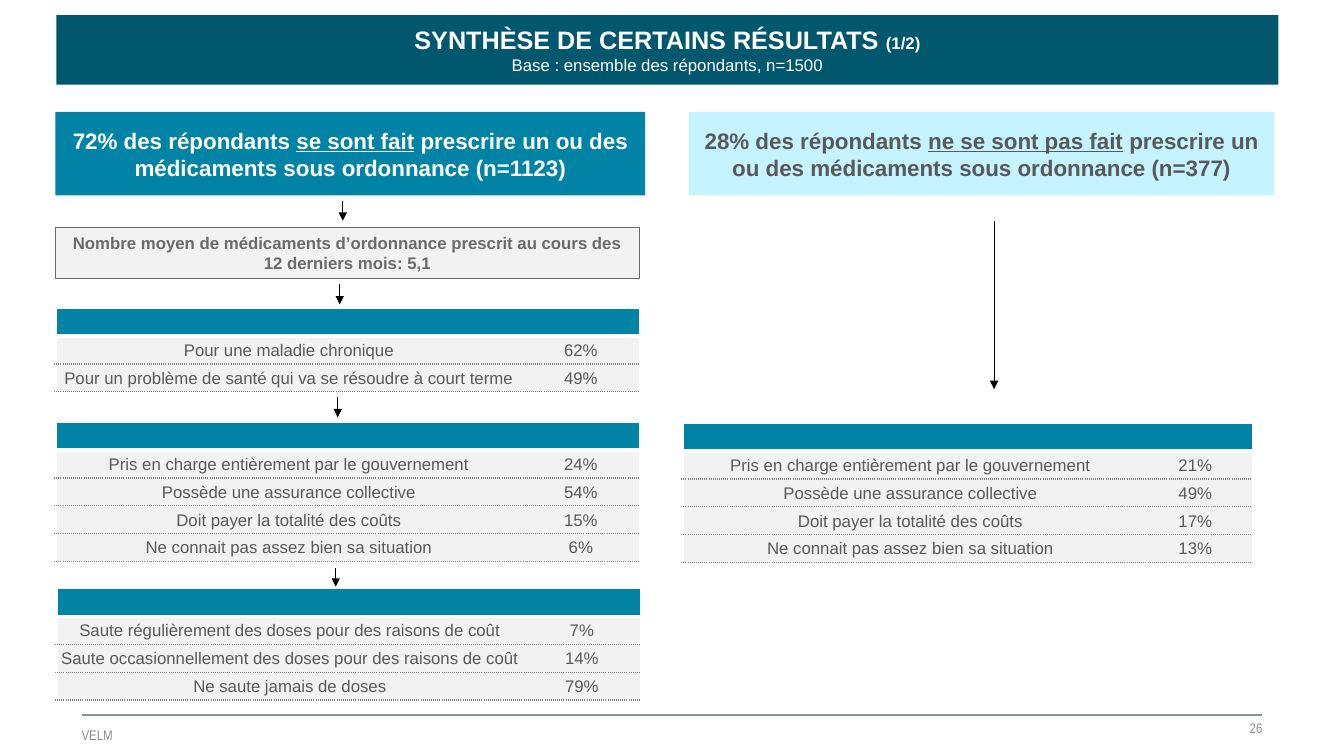
from lxml import etree
from pptx import Presentation
from pptx.dml.color import RGBColor
from pptx.enum.shapes import MSO_CONNECTOR, MSO_SHAPE
from pptx.enum.text import MSO_ANCHOR, MSO_AUTO_SIZE, PP_ALIGN
from pptx.oxml.ns import qn
from pptx.util import Inches, Pt

STRAIGHT = MSO_CONNECTOR.STRAIGHT
RECTANGLE = MSO_SHAPE.RECTANGLE
MIDDLE = MSO_ANCHOR.MIDDLE
CENTER, LEFT, RIGHT = PP_ALIGN.CENTER, PP_ALIGN.LEFT, PP_ALIGN.RIGHT
NO_AUTOFIT = MSO_AUTO_SIZE.NONE

WHITE, BLACK = "FFFFFF", "000000"
NAVY, TEAL, PALE_BLUE = "00576E", "0083A5", "C5F3FF"
PALE_GREY, DARK_GREY, MID_GREY = "F2F2F2", "595959", "6B6B6B"
FOOTER_GREY, RULE_GREY, DOT_GREY = "8C8C8C", "88959E", "808080"

ROW_HEIGHT = 0.276
VALUE_SHARE = 0.2
COVERAGE = [
    "Pris en charge entièrement par le gouvernement",
    "Possède une assurance collective",
    "Doit payer la totalité des coûts",
    "Ne connait pas assez bien sa situation",
]
TABLES = [
    (0.55, 3.06, 5.79, [
        ("Pour une maladie chronique", "62%"),
        ("Pour un problème de santé qui va se résoudre à court terme", "49%"),
    ]),
    (0.55, 4.19, 5.79, list(zip(COVERAGE, ["24%", "54%", "15%", "6%"]))),
    (6.77, 4.2, 5.65, list(zip(COVERAGE, ["21%", "49%", "17%", "13%"]))),
    (0.56, 5.84, 5.79, [
        ("Saute régulièrement des doses pour des raisons de coût", "7%"),
        ("Saute occasionnellement des doses pour des raisons de coût", "14%"),
        ("Ne saute jamais de doses", "79%"),
    ]),
]
GROUPS = [
    (0.55, 5.85, TEAL, WHITE, "72%", "se sont fait", "1123"),
    (6.83, 5.81, PALE_BLUE, DARK_GREY, "28%", "ne se sont pas fait", "377"),
]
ARROWS = [
    (3.4, 1.99, 2.19),
    (3.37, 2.82, 3.02),
    (3.35, 3.94, 4.14),
    (3.33, 5.64, 5.82),
    (9.86, 2.19, 3.86),
]


def color(value):
    return RGBColor.from_string(value)


def add_text(para, text, size=12, ink=DARK_GREY, font="Arial", bold=False, underline=False):
    span = para.add_run()
    span.text = text
    span.font.size = Pt(size)
    span.font.name = font
    span.font.bold = bold
    span.font.underline = underline
    span.font.color.rgb = color(ink)


def set_frame(box, align, inset=None):
    frame = box.text_frame
    frame.word_wrap = True
    frame.auto_size = NO_AUTOFIT
    frame.vertical_anchor = MIDDLE
    if inset is not None:
        frame.margin_left = frame.margin_right = Inches(inset)
        frame.margin_top = frame.margin_bottom = Inches(inset)
    para = frame.paragraphs[0]
    para.alignment = align
    return para


def add_title(page):
    box = page.shapes.title
    box.left, box.top = Inches(0.56), Inches(0.15)
    box.width, box.height = Inches(12.12), Inches(0.69)
    box.fill.solid()
    box.fill.fore_color.rgb = color(NAVY)
    para = set_frame(box, CENTER, inset=0)
    add_text(para, "SYNTHÈSE DE CERTAINS RÉSULTATS ", size=18, ink=WHITE, bold=True)
    add_text(para, "(1/2)", ink=WHITE, bold=True)
    para.add_line_break()
    add_text(para, "Base : ensemble des répondants, n=1500", ink=WHITE)


def add_panel(page, left, top, width, height, fill, outline=None):
    box = page.shapes.add_shape(
        RECTANGLE, Inches(left), Inches(top), Inches(width), Inches(height))
    box.shadow.inherit = False
    box.fill.solid()
    box.fill.fore_color.rgb = color(fill)
    if outline:
        box.line.color.rgb = color(outline)
        box.line.width = Pt(0.75)
    else:
        box.line.fill.background()
    return set_frame(box, CENTER)


def add_line(page, start, end, ink, width, arrow=False):
    line = page.shapes.add_connector(
        STRAIGHT, Inches(start[0]), Inches(start[1]), Inches(end[0]), Inches(end[1]))
    line.line.color.rgb = color(ink)
    line.line.width = Pt(width)
    if arrow:
        outline = line.line._get_or_add_ln()
        etree.SubElement(outline, qn("a:tailEnd"), type="triangle")
    etree.SubElement(line._element.spPr, qn("a:effectLst"))


def add_footer(page, text, left, top, width, align):
    box = page.shapes.add_textbox(Inches(left), Inches(top), Inches(width), Inches(0.26))
    para = set_frame(box, align, inset=0)
    add_text(para, text, size=10, ink=FOOTER_GREY, font="Arial Narrow")


def set_borders(cell, **borders):
    properties = cell._tc.get_or_add_tcPr()
    for position, side in enumerate("LRTB"):
        border = etree.Element(qn(f"a:ln{side}"))
        properties.insert(position, border)
        if side not in borders:
            etree.SubElement(border, qn("a:noFill"))
            continue
        ink, width, dash = borders[side]
        border.set("w", str(Pt(width)))
        fill = etree.SubElement(border, qn("a:solidFill"))
        etree.SubElement(fill, qn("a:srgbClr"), val=ink)
        etree.SubElement(border, qn("a:prstDash"), val=dash)


def format_cell(cell, text, fill, **borders):
    cell.fill.solid()
    cell.fill.fore_color.rgb = color(fill)
    cell.vertical_anchor = MIDDLE
    cell.margin_left = cell.margin_right = cell.margin_top = Inches(0.01)
    cell.margin_bottom = Inches(0)
    para = cell.text_frame.paragraphs[0]
    para.alignment = CENTER
    if text:
        add_text(para, text)
    else:
        etree.SubElement(para._p, qn("a:endParaRPr"), sz="1200")
    set_borders(cell, **borders)


def add_results(page, left, top, width, results):
    rows = [("", ""), *results]
    frame = page.shapes.add_table(
        len(rows), 2, Inches(left), Inches(top), Inches(width), Inches(ROW_HEIGHT * len(rows)))
    table = frame.table
    table.first_row = table.horz_banding = False
    table.columns[0].width = Inches(width * (1 - VALUE_SHARE))
    table.columns[1].width = Inches(width * VALUE_SHARE)
    dotted = (DOT_GREY, 1, "sysDot")
    gap = (WHITE, 3, "solid")
    for row, texts in enumerate(rows):
        table.rows[row].height = Inches(ROW_HEIGHT)
        above = [(WHITE, 1, "solid"), gap][row] if row < 2 else dotted
        for column, text in enumerate(texts):
            borders = {"T": above, "B": dotted if row else gap}
            if column == 0:
                borders["L"] = (WHITE, 2.25, "solid")
            format_cell(table.cell(row, column), text, PALE_GREY if row else TEAL, **borders)


def main():
    deck = Presentation()
    deck.slide_width, deck.slide_height = Inches(13.33), Inches(7.5)
    page = deck.slides.add_slide(deck.slide_layouts[5])
    add_title(page)
    add_line(page, (0.81, 7.09), (12.52, 7.09), RULE_GREY, 1.5)
    add_footer(page, "26", 8.73, 7.09, 3.79, RIGHT)
    add_footer(page, "VELM", 0.81, 7.16, 3.73, LEFT)
    for left, width, fill, ink, share, action, count in GROUPS:
        para = add_panel(page, left, 1.11, width, 0.83, fill)
        add_text(para, f"{share} des répondants ", size=16, ink=ink, bold=True)
        add_text(para, action, size=16, ink=ink, bold=True, underline=True)
        add_text(para, f" prescrire un ou des médicaments sous ordonnance (n={count})",
                 size=16, ink=ink, bold=True)
    para = add_panel(page, 0.55, 2.26, 5.79, 0.5, PALE_GREY, outline=MID_GREY)
    add_text(para, "Nombre moyen de médicaments d’ordonnance prescrit au cours des "
             "12 derniers mois: 5,1", ink=MID_GREY, bold=True)
    for left, top, width, results in TABLES:
        add_results(page, left, top, width, results)
    for x, top, bottom in ARROWS:
        add_line(page, (x, top), (x, bottom), BLACK, 0.75, arrow=True)
    deck.save("out.pptx")


if __name__ == "__main__":
    main()
